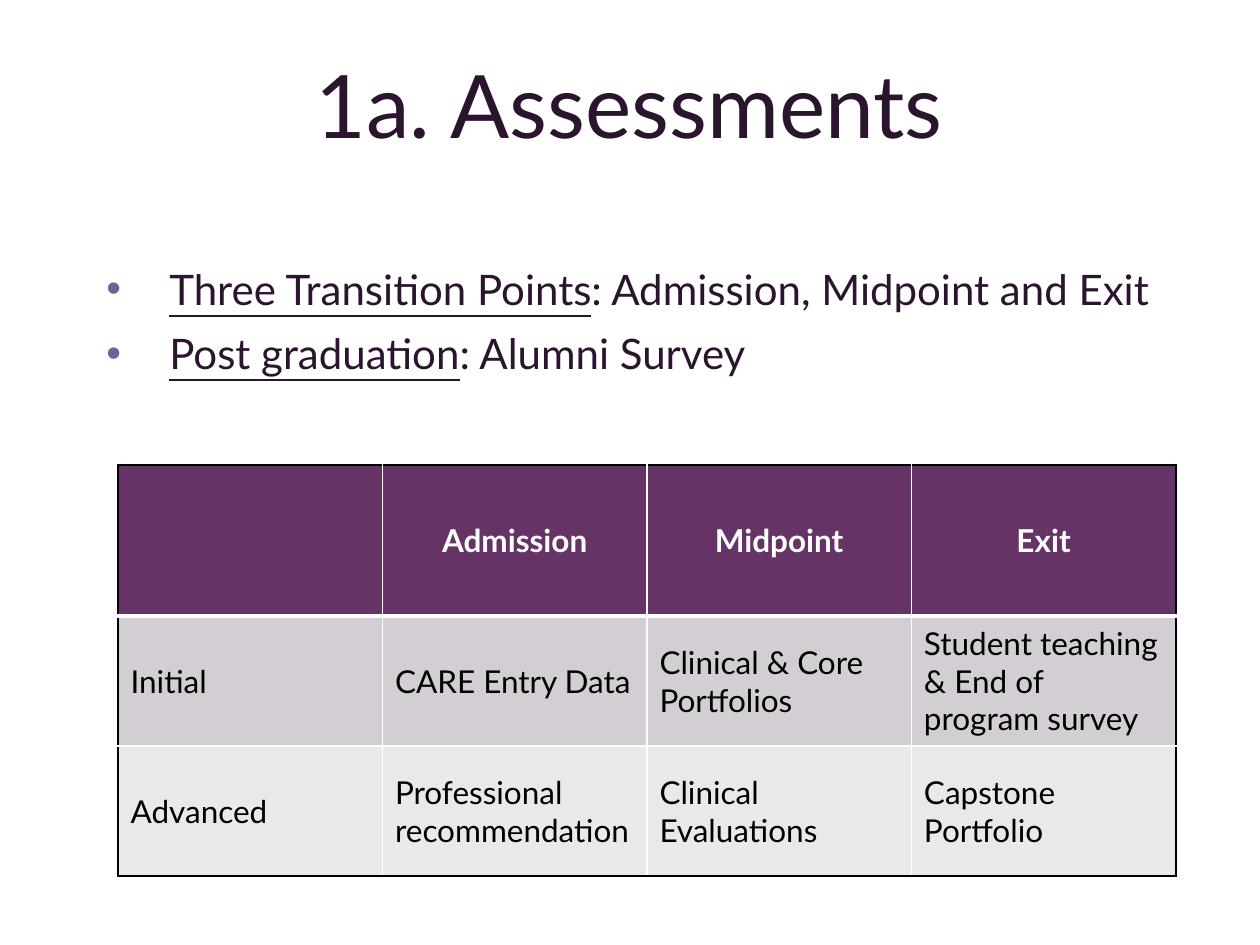
from dataclasses import dataclass

from lxml.etree import SubElement
from pptx import Presentation
from pptx.dml.color import RGBColor
from pptx.enum.text import MSO_ANCHOR as Anchor, PP_ALIGN as Align
from pptx.oxml.ns import qn
from pptx.util import Emu, Pt

PX_PER_INCH = 126
FONT = "Lato"
COLORS = {
    "text": "2B142D",
    "bullet": "666699",
    "header": "663366",
    "initial": "D3CED3",
    "advanced": "EAE8EA",
    "white": "FFFFFF",
    "black": "000000",
}


@dataclass
class Box:
    left: int
    top: int
    width: int
    height: int

    def emu(self) -> tuple:
        return tuple(px(n) for n in (self.left, self.top, self.width, self.height))


@dataclass
class Bullet:
    term: str
    detail: str


@dataclass
class Row:
    height: int
    fill: str
    texts: tuple


TITLE_BOX = Box(94, 9, 1071, 189)
BODY_BOX = Box(94, 257, 1071, 659)
TABLE_BOX = Box(118, 465, 1058, 411)
BULLET_INDENT = 63

BULLETS = [
    Bullet("Three Transition Points", ": Admission, Midpoint and Exit"),
    Bullet("Post graduation", ": Alumni Survey"),
]
ROWS = [
    Row(151, "header", ("", "Admission", "Midpoint", "Exit")),
    Row(130, "initial", ("Initial", "CARE Entry Data", "Clinical & Core Portfolios",
                         "Student teaching & End of program survey")),
    Row(130, "advanced", ("Advanced", "Professional recommendation",
                          "Clinical Evaluations", "Capstone Portfolio")),
]


def px(length: int) -> Emu:
    return Emu(round(length * 914400 / PX_PER_INCH))


def add_text(paragraph, text: str, *, size: int, color: str = "text",
             bold: bool = False, underline: bool = False) -> None:
    run = paragraph.add_run()
    run.text = text
    font = run.font
    font.name, font.size = FONT, Pt(size)
    font.bold, font.underline = bold, underline
    font.color.rgb = RGBColor.from_string(COLORS[color])


def add_frame(slide, box: Box, anchor):
    frame = slide.shapes.add_textbox(*box.emu()).text_frame
    frame.word_wrap = True
    frame.vertical_anchor = anchor
    return frame


def set_bullet(paragraph) -> None:
    properties = paragraph._p.get_or_add_pPr()
    properties.set("marL", str(px(BULLET_INDENT)))
    properties.set("indent", str(-px(BULLET_INDENT)))
    color = SubElement(properties, qn("a:buClr"))
    SubElement(color, qn("a:srgbClr"), val=COLORS["bullet"])
    SubElement(properties, qn("a:buFont"), typeface="Arial")
    SubElement(properties, qn("a:buChar"), char="•")


def set_border(cell, side: str, color: str, width: int) -> None:
    line = SubElement(cell._tc.get_or_add_tcPr(), qn(f"a:ln{side}"), w=str(Pt(width)))
    fill = SubElement(line, qn("a:solidFill"))
    SubElement(fill, qn("a:srgbClr"), val=COLORS[color])


def add_bullets(slide, box: Box, bullets: list[Bullet]) -> None:
    frame = add_frame(slide, box, Anchor.TOP)
    for index, bullet in enumerate(bullets):
        paragraph = frame.add_paragraph() if index else frame.paragraphs[0]
        if index:
            paragraph.space_before = Pt(8)
        set_bullet(paragraph)
        add_text(paragraph, bullet.term, size=24, underline=True)
        add_text(paragraph, bullet.detail, size=24)


def add_assessment_table(slide, box: Box, rows: list[Row]) -> None:
    last_row, last_column = len(rows) - 1, len(rows[0].texts) - 1
    table = slide.shapes.add_table(len(rows), last_column + 1, *box.emu()).table
    table.horz_banding = False
    for row_index, row in enumerate(rows):
        table.rows[row_index].height = px(row.height)
        is_header = row_index == 0
        for column_index, text in enumerate(row.texts):
            cell = table.cell(row_index, column_index)
            cell.vertical_anchor = Anchor.MIDDLE
            # Black outer frame, white inner rules, thick rule below the header
            outer_sides = {
                "L": column_index == 0,
                "R": column_index == last_column,
                "T": is_header,
                "B": row_index == last_row,
            }
            for side, is_outer in outer_sides.items():
                below_header = (side == "B" and is_header) or (side == "T" and row_index == 1)
                set_border(cell, side, "black" if is_outer else "white",
                           3 if below_header else 1)
            cell.fill.solid()
            cell.fill.fore_color.rgb = RGBColor.from_string(COLORS[row.fill])
            if text:
                paragraph = cell.text_frame.paragraphs[0]
                paragraph.alignment = Align.CENTER if is_header else Align.LEFT
                add_text(paragraph, text, size=18, bold=is_header,
                         color="white" if is_header else "black")


def main() -> None:
    presentation = Presentation()
    presentation.slide_width, presentation.slide_height = px(1260), px(945)
    slide = presentation.slides.add_slide(presentation.slide_layouts[6])

    # Title
    title = add_frame(slide, TITLE_BOX, Anchor.MIDDLE).paragraphs[0]
    title.alignment = Align.CENTER
    add_text(title, "1a. Assessments", size=50)

    # Transition points
    add_bullets(slide, BODY_BOX, BULLETS)

    # Assessments by programme level
    add_assessment_table(slide, TABLE_BOX, ROWS)

    presentation.save("out.pptx")


if __name__ == "__main__":
    main()
